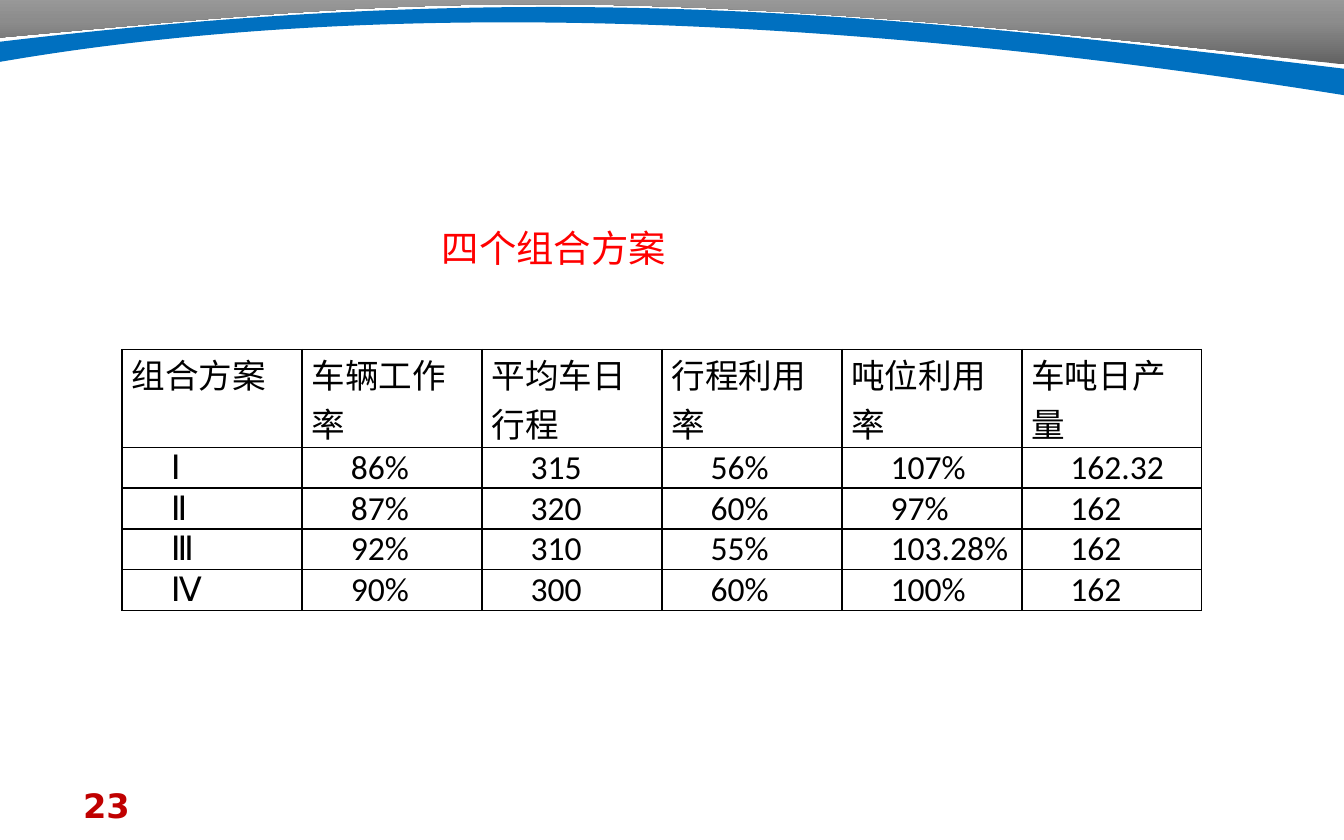
from copy import deepcopy

from lxml.etree import SubElement
from pptx import Presentation
from pptx.dml.color import RGBColor
from pptx.oxml.ns import qn
from pptx.util import Cm, Pt

BLACK = RGBColor(0x00, 0x00, 0x00)
RED = RGBColor(0xFF, 0x00, 0x00)
CRIMSON = RGBColor(0xC0, 0x00, 0x00)
BLUE = RGBColor(0x00, 0x70, 0xC0)
GREYS = [RGBColor(0x62, 0x62, 0x62), RGBColor(0x8C, 0x8C, 0x8C),
         RGBColor(0xA6, 0xA6, 0xA6)]

SANS = "Calibri"
HAN = "Noto Sans CJK SC"
BOLD = "DejaVu Sans"

ROWS = [
    ["组合方案", "车辆工作率", "平均车日行程", "行程利用率", "吨位利用率", "车吨日产量"],
    ["Ⅰ", "86%", "315", "56%", "107%", "162.32"],
    ["Ⅱ", "87%", "320", "60%", "97%", "162"],
    ["Ⅲ", "92%", "310", "55%", "103.28%", "162"],
    ["Ⅳ", "90%", "300", "60%", "100%", "162"],
]

# Outlines in cm: a part of one point is a line, of three points a curve
GREY_BAND = [
    [(25.4, 1.22)],
    [(11.25, -0.43), (7.82, 0), (0, 0.71)],
    [(0, 0.48)], [(0, -0.05)], [(25.4, -0.05)],
]
BLUE_BAND = [
    [(0, 0.79)],
    [(10.24, -0.43), (16.56, 0.23), (25.4, 1.3)],
    [(25.4, 1.8)],
    [(15.37, 0.2), (6.78, 0), (0, 1.17)],
]


class Deck:
    def __init__(self, wide, high):
        self.file = Presentation()
        self.file.slide_width = Cm(wide)
        self.file.slide_height = Cm(high)
        self.slide = self.file.slides.add_slide(self.file.slide_layouts[6])
        self.shapes = self.slide.shapes

    def run(self, para, text, size, font, color, bold=False):
        run = para.add_run()
        run.text = text
        run.font.size = Pt(size)
        run.font.name = font
        run.font.bold = bold
        run.font.color.rgb = color
        if font == HAN:
            SubElement(run.font._element, qn("a:ea"), typeface=font)

    def text(self, box, text, size, font, color, bold=False, wrap=True):
        frame = self.shapes.add_textbox(*map(Cm, box)).text_frame
        frame.word_wrap = wrap
        self.run(frame.paragraphs[0], text, size, font, color, bold)

    def band(self, parts, colors):
        """Closed outline with a plain fill, or a gradient from the bottom up."""
        points = [(Cm(x), Cm(y)) for part in parts for x, y in part]
        pen = self.shapes.build_freeform(*points[0])
        pen.add_line_segments(points[1:], close=True)
        shape = pen.convert_to_shape()
        shape.shadow.inherit = False
        shape.line.fill.background()
        self.bend(shape, parts)
        self.paint(shape.fill, colors)

    def bend(self, shape, parts):
        """Turn each run of three points into one cubic curve."""
        lines = iter(shape._element.findall(".//" + qn("a:lnTo")))
        for part in parts[1:]:
            group = [next(lines) for _ in part]
            if len(group) == 3:
                cubic = group[0].makeelement(qn("a:cubicBezTo"), {})
                group[0].addprevious(cubic)
                for line in group:
                    cubic.append(line[0])
                    line.getparent().remove(line)

    def paint(self, fill, colors):
        if len(colors) == 1:
            fill.solid()
            fill.fore_color.rgb = colors[0]
            return
        fill.gradient()
        fill.gradient_angle = 90
        first = fill.gradient_stops[0]._gs
        first.addnext(deepcopy(first))
        for i, (stop, color) in enumerate(zip(fill.gradient_stops, colors)):
            stop.color.rgb = color
            stop.position = i / (len(colors) - 1)

    def edge(self, cell):
        props = cell._tc.get_or_add_tcPr()
        for i, side in enumerate(("lnL", "lnR", "lnT", "lnB")):
            line = props.makeelement(qn("a:" + side), {"w": str(Pt(1))})
            fill = SubElement(line, qn("a:solidFill"))
            SubElement(fill, qn("a:srgbClr"), val=str(BLACK))
            props.insert(i, line)

    def table(self, left, top, rows, wide, head, high):
        count = len(rows[0])
        total = head + high * (len(rows) - 1)
        table = self.shapes.add_table(
            len(rows), count, Cm(left), Cm(top), Cm(wide * count), Cm(total)).table
        table.first_row = table.horz_banding = False
        for col in table.columns:
            col.width = Cm(wide)
        for i, row in enumerate(rows):
            table.rows[i].height = Cm(high if i else head)
            for j, text in enumerate(row):
                cell = table.cell(i, j)
                cell.margin_left = cell.margin_right = Cm(0.18)
                cell.margin_top = cell.margin_bottom = 0
                cell.fill.background()
                self.edge(cell)
                para = cell.text_frame.paragraphs[0]
                if i:
                    para._p.get_or_add_pPr().set("indent", str(Cm(0.74)))
                self.run(para, text, 18, SANS, BLACK)


def main():
    deck = Deck(25.4, 15.88)

    # Page number
    deck.text((1.32, 14.71, 5.92, 0.84), "23", 18, BOLD, CRIMSON, bold=True)

    # Curved bands along the top
    deck.band(GREY_BAND, GREYS)
    deck.band(BLUE_BAND, [BLUE])

    # Table and its title
    deck.table(2.31, 6.61, ROWS, wide=3.4, head=1.85, high=0.77)
    deck.text((8.1, 4.14, 4.78, 1.12), "四个组合方案", 20, HAN, RED, wrap=False)

    deck.file.save("out.pptx")


if __name__ == "__main__":
    main()
